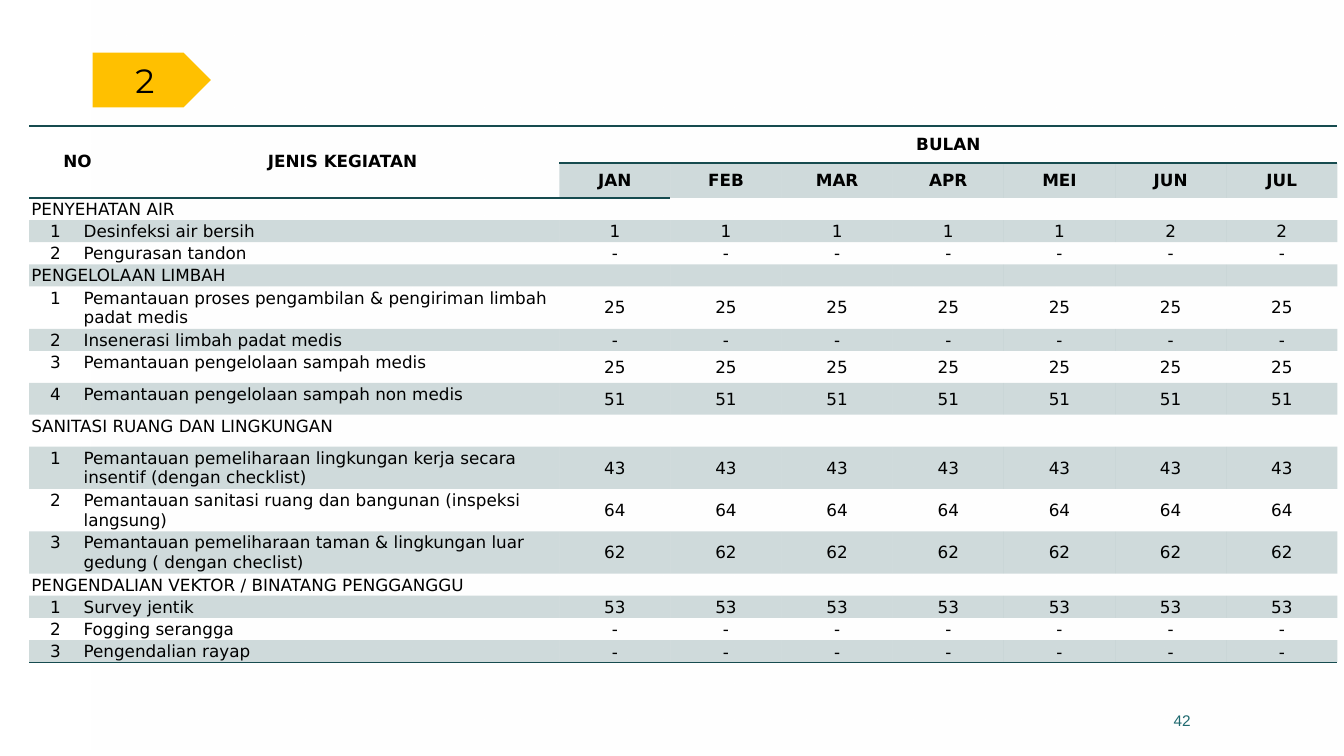
from lxml.etree import SubElement
from pptx import Presentation
from pptx.dml.color import RGBColor
from pptx.enum.shapes import MSO_SHAPE
from pptx.enum.text import MSO_ANCHOR, PP_ALIGN
from pptx.oxml.ns import qn
from pptx.util import Pt

TEAL = RGBColor(0x16, 0x4B, 0x4F)
PAGE_TEAL = RGBColor(0x1F, 0x69, 0x6F)
AMBER = RGBColor(0xFF, 0xC0, 0x00)
BLACK = RGBColor(0, 0, 0)
WHITE = RGBColor(0xFF, 0xFF, 0xFF)

TABLE_FONT = "DejaVu Sans"
NO_STYLE = "{2D5ABB26-0587-4C30-8999-92F81FD0307C}"
MONTHS = ["JAN", "FEB", "MAR", "APR", "MEI", "JUN", "JUL"]
FIRST_MONTH = 4
COLUMN_WIDTHS = [37.4, 31, 216.7, 92.9] + [79.4] * len(MONTHS)
HEADER_HEIGHTS = [26.4, 25]
ONE_LINE, TALL, TWO_LINES = 15.4, 22.8, 29.4

# Each section: title, row height, activities (name, row height, monthly values)
SECTIONS = [
    ("PENYEHATAN AIR", ONE_LINE, [
        ("Desinfeksi air bersih", ONE_LINE, ["1"] * 5 + ["2"] * 2),
        ("Pengurasan tandon", ONE_LINE, ["-"] * 7),
    ]),
    ("PENGELOLAAN LIMBAH", ONE_LINE, [
        ("Pemantauan proses pengambilan & pengiriman limbah padat medis",
         TWO_LINES, ["25"] * 7),
        ("Insenerasi limbah padat medis", ONE_LINE, ["-"] * 7),
        ("Pemantauan pengelolaan sampah medis", TALL, ["25"] * 7),
        ("Pemantauan pengelolaan sampah non medis", TALL, ["51"] * 7),
    ]),
    ("SANITASI RUANG DAN LINGKUNGAN", TALL, [
        ("Pemantauan pemeliharaan lingkungan kerja secara insentif (dengan checklist)",
         TWO_LINES, ["43"] * 7),
        ("Pemantauan sanitasi ruang dan bangunan (inspeksi langsung)",
         TWO_LINES, ["64"] * 7),
        ("Pemantauan pemeliharaan taman & lingkungan luar gedung ( dengan checlist)",
         TWO_LINES, ["62"] * 7),
    ]),
    ("PENGENDALIAN VEKTOR / BINATANG PENGGANGGU", ONE_LINE, [
        ("Survey jentik", ONE_LINE, ["53"] * 7),
        ("Fogging serangga", ONE_LINE, ["-"] * 7),
        ("Pengendalian rayap", ONE_LINE, ["-"] * 7),
    ]),
]


def add_run(paragraph, text, size, font, color, bold=False):
    run = paragraph.add_run()
    run.text = text
    run.font.size = Pt(size)
    run.font.name = font
    run.font.bold = bold
    run.font.color.rgb = color


def set_alpha(color_element, percent):
    SubElement(color_element, qn("a:alpha"), val=str(percent * 1000))


def add_veil(slide):
    veil = slide.shapes.add_shape(MSO_SHAPE.RECTANGLE, Pt(65.5), 0, Pt(893.5), Pt(540))
    veil.shadow.inherit = False
    veil.line.fill.background()
    veil.fill.gradient()
    veil.fill.gradient_angle = 270
    for stop, opacity in zip(veil.fill.gradient_stops, (60, 0)):
        stop.color.rgb = WHITE
    for color, opacity in zip(veil._element.spPr.iter(qn("a:srgbClr")), (60, 0)):
        set_alpha(color, opacity)


def add_number_tag(slide, number):
    tag = slide.shapes.add_shape(MSO_SHAPE.PENTAGON, Pt(66.2), Pt(37.7), Pt(84.4), Pt(39))
    tag.shadow.inherit = False
    tag.fill.solid()
    tag.fill.fore_color.rgb = AMBER
    tag.line.fill.background()
    tag.text_frame.vertical_anchor = MSO_ANCHOR.MIDDLE
    paragraph = tag.text_frame.paragraphs[0]
    paragraph.alignment = PP_ALIGN.CENTER
    add_run(paragraph, number, 24, "Montserrat", BLACK)


def add_page_number(slide, number):
    page = slide.shapes.add_textbox(Pt(633.6), Pt(500.4), Pt(224), Pt(28.8)).text_frame
    page.word_wrap = True
    page.vertical_anchor = MSO_ANCHOR.MIDDLE
    page.paragraphs[0].alignment = PP_ALIGN.RIGHT
    add_run(page.paragraphs[0], number, 11, "Arial", PAGE_TEAL)


def write_cell(cell, text, align=PP_ALIGN.CENTER, anchor=MSO_ANCHOR.MIDDLE, bold=False):
    paragraph = cell.text_frame.paragraphs[0]
    paragraph.alignment = align
    cell.vertical_anchor = anchor
    add_run(paragraph, text, 12, TABLE_FONT, BLACK, bold)


def set_margins(cell, side, top, bottom):
    cell.margin_left = cell.margin_right = Pt(side)
    cell.margin_top, cell.margin_bottom = Pt(top), Pt(bottom)


def add_rule(cell, edge):
    line = SubElement(cell._tc.get_or_add_tcPr(), qn("a:" + edge), w=str(Pt(1)))
    SubElement(SubElement(line, qn("a:solidFill")), qn("a:srgbClr"), val=str(TEAL))


def format_cells(table):
    """Set margins, rules and bands for the whole grid."""
    last_row = len(table.rows) - 1
    for r in range(last_row + 1):
        for c in range(len(COLUMN_WIDTHS)):
            cell = table.cell(r, c)
            is_month = c >= FIRST_MONTH
            if r < 2:
                set_margins(cell, 14.4, 5, 5)
            elif is_month:
                set_margins(cell, 0.75, 0.75, 0)
            else:
                set_margins(cell, 1.5, 1.4, 0)
            # Keeps empty cells from stretching their row
            SubElement(cell.text_frame.paragraphs[0]._p, qn("a:endParaRPr"), sz="1200")
            if r == 0:
                add_rule(cell, "lnT")
            if r in (0, last_row) or (r == 1 and c <= FIRST_MONTH):
                add_rule(cell, "lnB")
            if r % 2 and (r > 1 or is_month):
                cell.fill.solid()
                cell.fill.fore_color.rgb = TEAL
                set_alpha(cell._tc.tcPr.find(qn("a:solidFill"))[0], 20)
            else:
                cell.fill.background()


def merge(table, row, first, last, last_row=None):
    table.cell(row, first).merge(table.cell(last_row or row, last))


def fill_header(table):
    merge(table, 0, 0, 1, 1)
    merge(table, 0, 2, 3, 1)
    merge(table, 0, FIRST_MONTH, len(COLUMN_WIDTHS) - 1)
    for column, heading in ((0, "NO"), (2, "JENIS KEGIATAN"), (FIRST_MONTH, "BULAN")):
        write_cell(table.cell(0, column), heading, bold=True)
    for column, month in enumerate(MONTHS, FIRST_MONTH):
        write_cell(table.cell(1, column), month, bold=True)


def fill_activity(table, row, number, name, values):
    merge(table, row, 1, 3)
    write_cell(table.cell(row, 0), str(number), anchor=MSO_ANCHOR.TOP)
    write_cell(table.cell(row, 1), name, PP_ALIGN.LEFT, MSO_ANCHOR.TOP)
    is_last = row == len(table.rows) - 1
    anchor = MSO_ANCHOR.BOTTOM if is_last else MSO_ANCHOR.MIDDLE
    for column, value in enumerate(values, FIRST_MONTH):
        write_cell(table.cell(row, column), value, anchor=anchor)


def add_schedule(slide):
    heights = list(HEADER_HEIGHTS)
    for _, title_height, activities in SECTIONS:
        heights += [title_height] + [height for _, height, _ in activities]
    table = slide.shapes.add_table(
        len(heights), len(COLUMN_WIDTHS), Pt(20.9), Pt(90),
        Pt(sum(COLUMN_WIDTHS)), Pt(sum(heights))).table
    table.first_row = table.horz_banding = False
    table._tbl.tblPr.find(qn("a:tableStyleId")).text = NO_STYLE
    for column, width in zip(table.columns, COLUMN_WIDTHS):
        column.width = Pt(width)
    for row, height in zip(table.rows, heights):
        row.height = Pt(height)
    format_cells(table)
    fill_header(table)

    row = len(HEADER_HEIGHTS)
    for title, _, activities in SECTIONS:
        if row == len(HEADER_HEIGHTS):
            merge(table, row, 0, 2)
            merge(table, row, 3, 4)
        else:
            merge(table, row, 0, 4)
        write_cell(table.cell(row, 0), title, PP_ALIGN.LEFT, MSO_ANCHOR.TOP)
        for number, (name, _, values) in enumerate(activities, 1):
            fill_activity(table, row + number, number, name, values)
        row += 1 + len(activities)


def main():
    deck = Presentation()
    deck.slide_width, deck.slide_height = Pt(960), Pt(540)
    slide = deck.slides.add_slide(deck.slide_layouts[6])
    add_veil(slide)
    add_page_number(slide, "42")
    add_number_tag(slide, "2")
    add_schedule(slide)
    deck.save("out.pptx")


if __name__ == "__main__":
    main()
